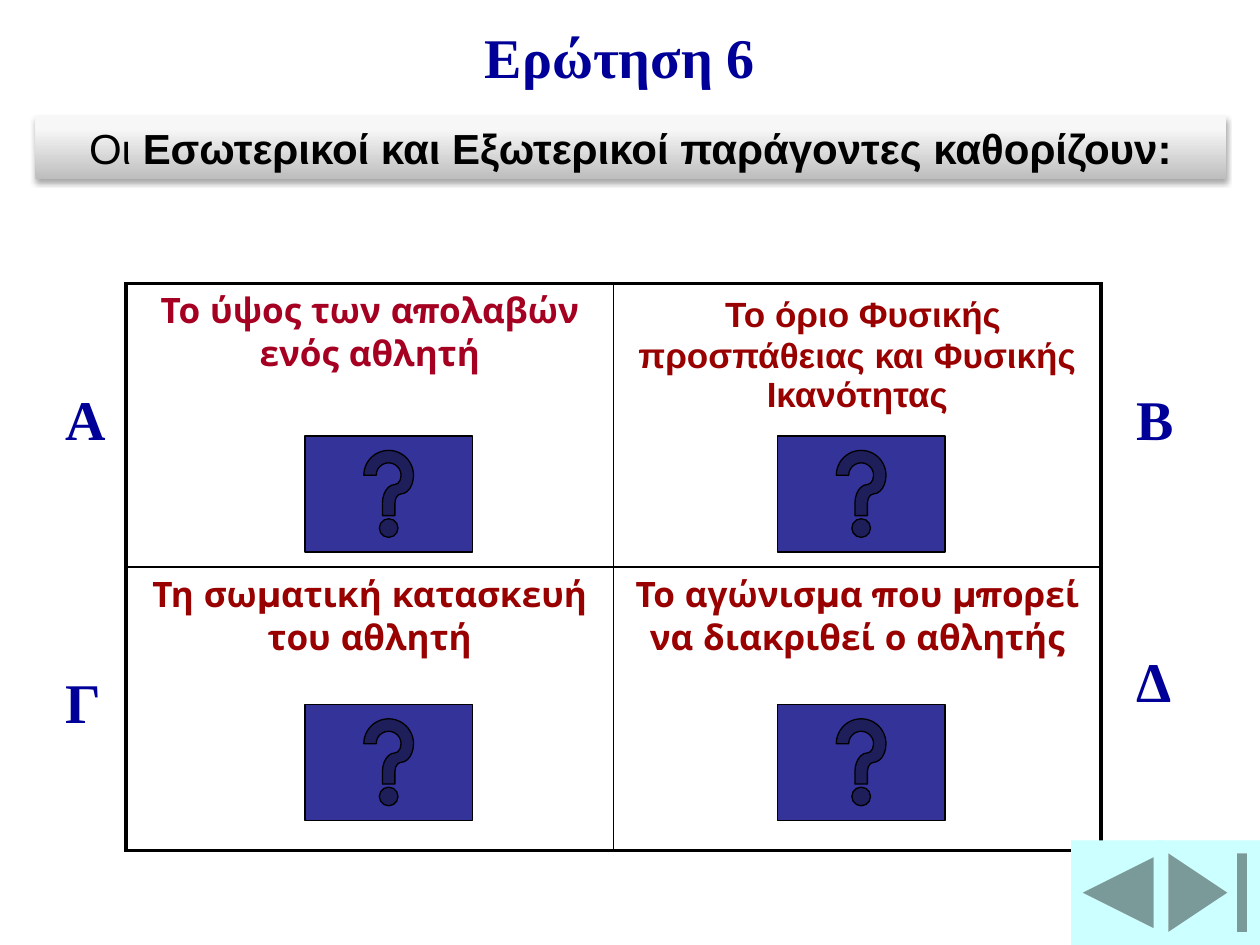
from itertools import product

from lxml import etree
from pptx import Presentation
from pptx.dml.color import RGBColor
from pptx.enum import shapes, text
from pptx.oxml import ns, parse_xml
from pptx.util import Inches, Pt

THEME = {
    "navy": "000099", "crimson": "A50021", "red": "990000", "dark_red": "C00000",
    "black": "000000", "white": "FFFFFF", "help": "333399", "nav": "CCFFFF",
    "serif": "Times New Roman", "sans": "Arial", "answer": "Montserrat",
    "heading_size": 32, "question_size": 24, "answer_size": 20,
    "outer_border": 2.25, "inner_border": 1,
}

# Runs: (text, font, size, colour, bold)
QUESTION = [
    ("Οι ", "sans", "question_size", "black", False),
    ("Εσωτερικοί και Εξωτερικοί παράγοντες καθορίζουν:", "sans", "question_size", "black", True),
]
ANSWERS = [
    [[("Το ύψος των απολαβών ενός αθλητή", "answer", "answer_size", "crimson", True)],
     [(" ", "sans", "question_size", "dark_red", True),
      ("Το όριο Φυσικής προσπάθειας και Φυσικής Ικανότητας", "sans", "answer_size", "red", True)]],
    [[("Τη σωματική κατασκευή του αθλητή", "answer", "answer_size", "red", True)],
     [("Το αγώνισμα που μπορεί να διακριθεί ο αθλητής", "answer", "answer_size", "red", True)]],
]
# Text, left, top, width
HEADINGS = [
    ("Α", 0.42, 3, 0.5), ("Γ", 0.42, 5.25, 0.5),
    ("Β", 8.92, 3, 0.5), ("Δ", 8.92, 5.08, 0.5),
    ("Ερώτηση 6", 3.75, 0.13, 2.67),
]
TABLE_AT = (1, 2.25, 7.74, 4.5)
QUESTION_AT = (0.28, 0.92, 9.45, 0.5)
HELP_LEFTS, HELP_TOPS, HELP_SIZE = (2.42, 6.17), (3.46, 5.59), (1.33, 0.92)
NAV_BUTTONS = [
    (shapes.MSO_SHAPE.ACTION_BUTTON_END, (9.17, 6.67, 0.83, 0.83)),
    (shapes.MSO_SHAPE.ACTION_BUTTON_BACK_OR_PREVIOUS, (8.5, 6.67, 0.75, 0.83)),
]
GRADIENT = [(0, "BEBEBE"), (80, "F7F7F7"), (100, "F8F8F8")]


def colour(name):
    return RGBColor.from_string(THEME[name])


def inches(values):
    return [Inches(value) for value in values]


def add_runs(para, runs):
    for words, font, size, shade, bold in runs:
        span = para.add_run()
        span.text = words
        span.font.name = THEME[font]
        span.font.size = Pt(THEME[size])
        span.font.color.rgb = colour(shade)
        span.font.bold = bold


def set_borders(cell, row, column):
    """Draw thick lines on the table's outer edge and thin ones inside."""
    outer = {"L": column == 0, "R": column == 1, "T": row == 0, "B": row == 1}
    properties = cell._tc.get_or_add_tcPr()
    for index, (side, is_outer) in enumerate(outer.items()):
        width = Pt(THEME["outer_border" if is_outer else "inner_border"])
        properties.insert(index, parse_xml(
            f'<a:ln{side} {ns.nsdecls("a")} w="{width}"><a:solidFill>'
            f'<a:srgbClr val="{THEME["black"]}"/></a:solidFill></a:ln{side}>'))


def add_answers(slide):
    table = slide.shapes.add_table(2, 2, *inches(TABLE_AT)).table
    table.first_row = table.horz_banding = False
    for row, column in product(range(2), repeat=2):
        cell = table.cell(row, column)
        cell.fill.solid()
        cell.fill.fore_color.rgb = colour("white")
        para = cell.text_frame.paragraphs[0]
        para.alignment = text.PP_ALIGN.CENTER
        add_runs(para, ANSWERS[row][column])
        set_borders(cell, row, column)


def add_heading(slide, words, left, top, width):
    box = slide.shapes.add_textbox(*inches((left, top, width, 0.63)))
    frame = box.text_frame
    frame.word_wrap = True
    frame.auto_size = text.MSO_AUTO_SIZE.SHAPE_TO_FIT_TEXT
    add_runs(frame.paragraphs[0], [(words, "serif", "heading_size", "navy", True)])


def add_button(slide, kind, place, fill, outlined):
    button = slide.shapes.add_shape(kind, *inches(place))
    button.shadow.inherit = False
    button.fill.solid()
    button.fill.fore_color.rgb = colour(fill)
    if outlined:
        button.line.color.rgb = colour("black")
        button.line.width = Pt(0.75)
    else:
        button.line.fill.background()


def add_question(slide):
    bar = slide.shapes.add_shape(shapes.MSO_SHAPE.RECTANGLE, *inches(QUESTION_AT))
    bar.shadow.inherit = False
    bar.line.fill.background()
    stops = "".join(f'<a:gs pos="{position * 1000}"><a:srgbClr val="{shade}"/></a:gs>'
                    for position, shade in GRADIENT)
    properties = bar._element.spPr
    properties.find(ns.qn("a:prstGeom")).addnext(parse_xml(
        f'<a:gradFill {ns.nsdecls("a")} rotWithShape="1"><a:gsLst>{stops}</a:gsLst>'
        '<a:lin ang="16200000" scaled="0"/></a:gradFill>'))
    shadow = etree.SubElement(
        properties.find(ns.qn("a:effectLst")), ns.qn("a:outerShdw"),
        blurRad=str(Pt(3.1)), dist=str(Pt(1.8)), dir="5400000", rotWithShape="0")
    shade = etree.SubElement(shadow, ns.qn("a:srgbClr"), val=THEME["black"])
    etree.SubElement(shade, ns.qn("a:alpha"), val="35000")
    frame = bar.text_frame
    frame.word_wrap = True
    frame.auto_size = text.MSO_AUTO_SIZE.SHAPE_TO_FIT_TEXT
    frame.vertical_anchor = text.MSO_ANCHOR.TOP
    para = frame.paragraphs[0]
    para.alignment = text.PP_ALIGN.CENTER
    add_runs(para, QUESTION)


def main():
    deck = Presentation()
    deck.slide_width, deck.slide_height = Inches(10), Inches(7.5)
    slide = deck.slides.add_slide(deck.slide_layouts[6])
    add_answers(slide)
    for heading in HEADINGS:
        add_heading(slide, *heading)
    for left, top in product(HELP_LEFTS, HELP_TOPS):
        add_button(slide, shapes.MSO_SHAPE.ACTION_BUTTON_HELP,
                   (left, top, *HELP_SIZE), "help", True)
    for kind, place in NAV_BUTTONS:
        add_button(slide, kind, place, "nav", False)
    add_question(slide)
    deck.save("out.pptx")


if __name__ == "__main__":
    main()
